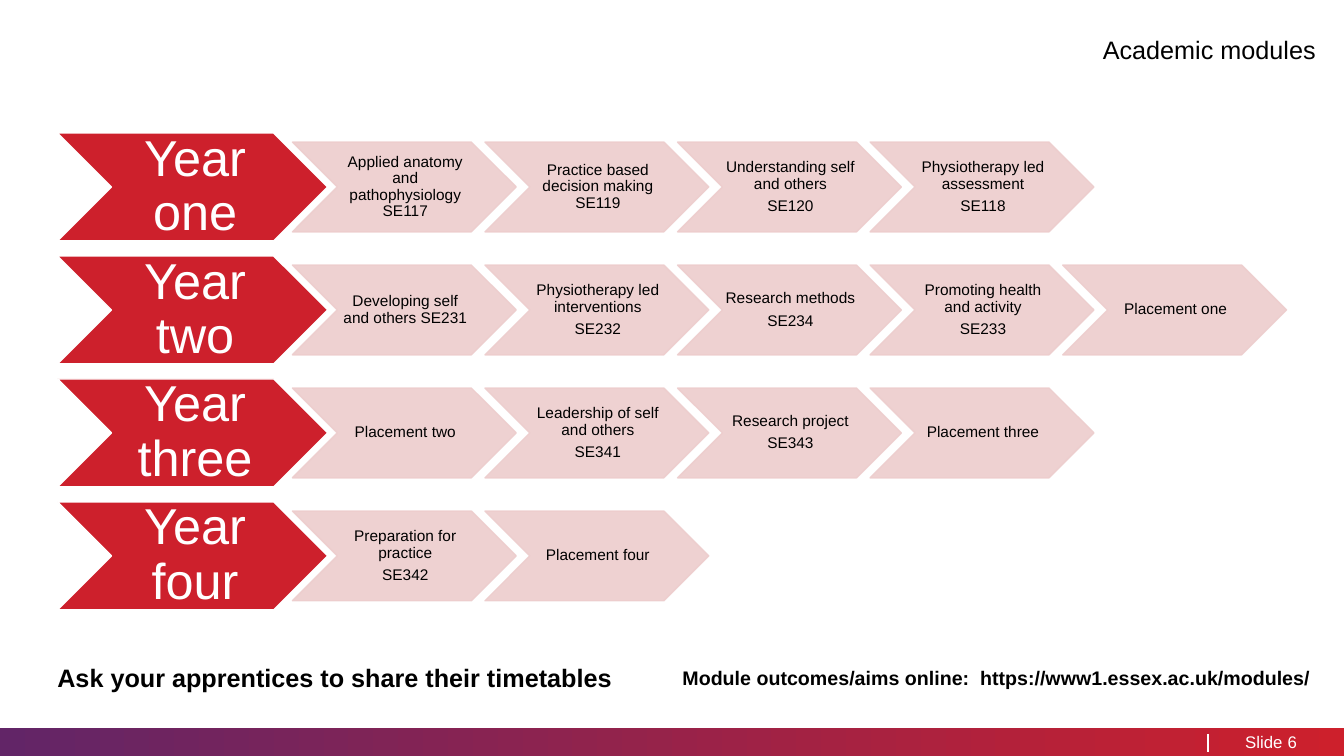
from lxml.etree import SubElement
from pptx import Presentation
from pptx.dml.color import RGBColor
from pptx.enum.shapes import MSO_CONNECTOR, MSO_SHAPE
from pptx.enum.text import MSO_ANCHOR, PP_ALIGN
from pptx.oxml.ns import qn
from pptx.util import Inches, Pt

COLORS = {"red": "CD202C", "purple": "622567", "pink": "EDCDCD",
          "white": "FFFFFF", "black": "000000"}
FONT = "Arial"

TITLE = "Academic modules"
YEARS = [
    ("Year one", [
        ["Applied anatomy and pathophysiology SE117"],
        ["Practice based decision making SE119"],
        ["Understanding self and others", "SE120"],
        ["Physiotherapy led assessment", "SE118"],
    ]),
    ("Year two", [
        ["Developing self and others SE231"],
        ["Physiotherapy led interventions", "SE232"],
        ["Research methods", "SE234"],
        ["Promoting health and activity", "SE233"],
        ["Placement one"],
    ]),
    ("Year three", [
        ["Placement two"],
        ["Leadership of self and others", "SE341"],
        ["Research project", "SE343"],
        ["Placement three"],
    ]),
    ("Year four", [
        ["Preparation for practice", "SE342"],
        ["Placement four"],
    ]),
]
# text, (left, top, width, height), size
NOTES = [
    ("Module outcomes/aims online:  https://www1.essex.ac.uk/modules/",
     (6.67, 6.56, 6.58, 0.34), 14),
    ("Ask your apprentices to share their timetables",
     (0.47, 6.52, 5.89, 0.4), 18),
]

ROW_TOP, ROW_STEP = 1.32, 1.22
YEAR_LEFT, YEAR_WIDTH, YEAR_HEIGHT = 0.57, 2.68, 1.07
MODULE_LEFT, MODULE_STEP, MODULE_WIDTH, MODULE_HEIGHT = 2.9, 1.91, 2.22, 0.89
BAR_TOP, BAR_HEIGHT = 7.22, 0.28


def color(name):
    return RGBColor.from_string(COLORS[name])


def inches(lengths):
    return [Inches(length) for length in lengths]


def write(shape, lines, size, ink="black", bold=False, align=PP_ALIGN.LEFT,
          spacing=1, gap=0, anchor=MSO_ANCHOR.MIDDLE, insets=(0, 0.05, 0, 0.05)):
    """Fill a shape with paragraphs; gap is the space in points between them."""
    frame = shape.text_frame
    frame.word_wrap = True
    frame.vertical_anchor = anchor
    (frame.margin_left, frame.margin_top,
     frame.margin_right, frame.margin_bottom) = inches(insets)
    for index, line in enumerate(lines):
        para = frame.add_paragraph() if index else frame.paragraphs[0]
        para.alignment = align
        para.line_spacing = spacing
        para.space_before = Pt(gap if index else 0)
        span = para.add_run()
        span.text = line
        span.font.name = FONT
        span.font.size = Pt(size)
        span.font.bold = bold
        span.font.color.rgb = color(ink)


def add_chevron(page, box, fill, line, opacity=100):
    chevron = page.shapes.add_shape(MSO_SHAPE.CHEVRON, *inches(box))
    chevron.shadow.inherit = False
    chevron.fill.solid()
    chevron.fill.fore_color.rgb = color(fill)
    chevron.line.color.rgb = color(line)
    chevron.line.width = Pt(1)
    if opacity < 100:
        for paint in chevron._element.spPr.iter(qn("a:srgbClr")):
            SubElement(paint, qn("a:alpha"), val=str(opacity * 1000))
    return chevron


def add_footer(page):
    bar = page.shapes.add_shape(MSO_SHAPE.RECTANGLE,
                                *inches((0, BAR_TOP, 13.33, BAR_HEIGHT)))
    bar.shadow.inherit = False
    bar.line.fill.background()
    bar.fill.gradient()
    bar.fill.gradient_angle = 0
    for stop, name, position in zip(bar.fill.gradient_stops, ("purple", "red"), (0, 1)):
        stop.color.rgb = color(name)
        stop.position = position

    divider = page.shapes.add_connector(MSO_CONNECTOR.STRAIGHT,
                                        *inches((11.98, 7.28, 11.98, 7.46)))
    divider.line.color.rgb = color("white")
    divider.line.width = Pt(1)
    SubElement(divider._element.spPr, qn("a:effectLst"))

    for text, left, width, align in (("Slide", 12.22, 0.5, PP_ALIGN.RIGHT),
                                     ("6", 12.77, 0.33, PP_ALIGN.LEFT)):
        label = page.shapes.add_textbox(*inches((left, BAR_TOP, width, BAR_HEIGHT)))
        write(label, [text], 12, "white", align=align)


def add_year(page, row, year, modules):
    top = ROW_TOP + row * ROW_STEP
    chevron = add_chevron(page, (YEAR_LEFT, top, YEAR_WIDTH, YEAR_HEIGHT), "red", "white")
    write(chevron, [year], 36, "white", align=PP_ALIGN.CENTER, spacing=0.9,
          insets=(0.05, 0.03, 0, 0.03))
    module_top = top + (YEAR_HEIGHT - MODULE_HEIGHT) / 2
    for column, lines in enumerate(modules):
        left = MODULE_LEFT + column * MODULE_STEP
        chevron = add_chevron(page, (left, module_top, MODULE_WIDTH, MODULE_HEIGHT),
                              "pink", "pink", opacity=90)
        write(chevron, lines, 11, align=PP_ALIGN.CENTER, spacing=0.9, gap=3.85,
              insets=(0.02, 0.01, 0, 0.01))


def main():
    deck = Presentation()
    deck.slide_width, deck.slide_height = inches((13.33, 7.5))
    page = deck.slides.add_slide(deck.slide_layouts[5])

    add_footer(page)
    title = page.shapes.title
    title.left, title.top, title.width, title.height = inches((6.8, 0, 6.25, 0.97))
    write(title, [TITLE], 18, align=PP_ALIGN.RIGHT, spacing=1.3, insets=(0, 0, 0, 0.08))
    for row, (year, modules) in enumerate(YEARS):
        add_year(page, row, year, modules)
    for text, box, size in NOTES:
        note = page.shapes.add_textbox(*inches(box))
        write(note, [text], size, bold=True, anchor=MSO_ANCHOR.TOP,
              insets=(0.1, 0.05, 0.1, 0.05))
    deck.save("out.pptx")


if __name__ == "__main__":
    main()
